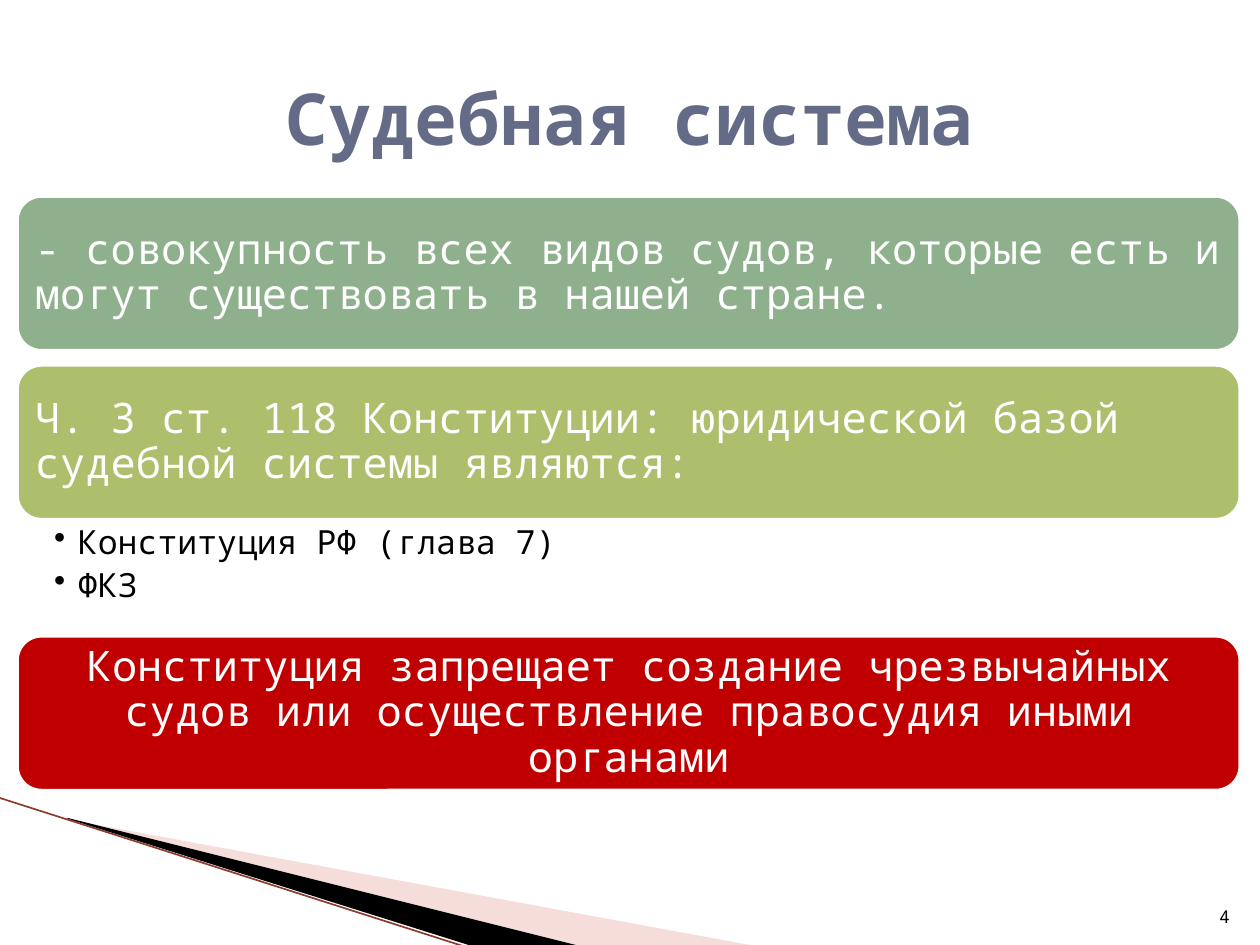
from lxml import etree
from pptx import Presentation
from pptx.dml.color import RGBColor
from pptx.enum.shapes import MSO_CONNECTOR as Connector, MSO_SHAPE as Shape
from pptx.enum.text import MSO_ANCHOR as Anchor, PP_ALIGN as Align
from pptx.oxml.ns import qn
from pptx.util import Pt

FONT = "Noto Sans Mono"
COLORS = {
    "white": "FFFFFF", "black": "000000", "title": "646B86", "sage": "8FB08C",
    "olive": "ADBF6C", "red": "C00000", "pink": "E7ACA4", "edge": "8E3B2F",
}
TITLE = "Судебная система"
PAGE_NUMBER = "4"
LEFT, WIDTH, TOP = 8.6, 701.3, 110.9
CARD_HEIGHT, LIST_HEIGHT, GAP = 90.7, 64.1, 5.8
CARDS = [
    ("- совокупность всех видов судов, которые есть и могут существовать в нашей стране.",
     "sage", Align.LEFT, []),
    ("Ч. 3 ст. 118 Конституции: юридической базой судебной системы являются:",
     "olive", Align.LEFT, ["Конституция РФ (глава 7)", "ФКЗ"]),
    ("Конституция запрещает создание чрезвычайных судов или осуществление правосудия иными органами",
     "red", Align.CENTER, []),
]
WEDGES = [
    ("pink", 40, [(39.6, 468.5), (428.4, 540), (328.3, 540), (39.6, 468)]),
    ("black", 100, [(38.2, 467.3), (329, 540), (267.8, 540), (38.9, 468)]),
]


def color(name):
    return RGBColor.from_string(COLORS[name])


def fill(shape, name):
    shape.shadow.inherit = False
    shape.fill.solid()
    shape.fill.fore_color.rgb = color(name)


def write(shape, lines, size, tone, align=Align.LEFT, anchor=Anchor.MIDDLE,
          insets=(7.2, 3.6, 7.2, 3.6), spacing=1.0, bold=False, bullets=False):
    frame = shape.text_frame
    frame.word_wrap = True
    frame.vertical_anchor = anchor
    (frame.margin_left, frame.margin_top,
     frame.margin_right, frame.margin_bottom) = map(Pt, insets)
    for index, line in enumerate(lines):
        para = frame.add_paragraph() if index else frame.paragraphs[0]
        para.text = line
        para.alignment = align
        para.line_spacing = spacing
        if bullets:
            para.space_after = Pt(4)
            props = para._p.get_or_add_pPr()
            props.set("marL", str(Pt(13.7)))
            props.set("indent", str(-Pt(13.7)))
            etree.SubElement(props, qn("a:buChar")).set("char", "•")
        font = para.font
        font.name, font.size, font.bold = FONT, Pt(size), bold
        font.color.rgb = color(tone)


deck = Presentation()
deck.slide_width, deck.slide_height = Pt(720), Pt(540)
page = deck.slides.add_slide(deck.slide_layouts[6])
shapes = page.shapes


def text_box(left, top, width, height):
    return shapes.add_textbox(Pt(left), Pt(top), Pt(width), Pt(height))


for tone, opacity, points in WEDGES:
    corners = [(Pt(x), Pt(y)) for x, y in points]
    builder = shapes.build_freeform(*corners[0])
    builder.add_line_segments(corners[1:], close=True)
    wedge = builder.convert_to_shape()
    fill(wedge, tone)
    wedge.line.fill.background()
    if opacity < 100:
        tint = wedge._element.spPr.find(".//" + qn("a:srgbClr"))
        etree.SubElement(tint, qn("a:alpha")).set("val", str(opacity * 1000))

edge = shapes.add_connector(Connector.STRAIGHT, Pt(-0.7), Pt(455.8), Pt(267.1), Pt(541.4))
edge.line.color.rgb = color("edge")
edge.line.width = Pt(0.95)
etree.SubElement(edge._element.spPr, qn("a:effectLst"))

top = TOP
for text, tone, align, items in CARDS:
    card = shapes.add_shape(Shape.ROUNDED_RECTANGLE, Pt(LEFT), Pt(top), Pt(WIDTH), Pt(CARD_HEIGHT))
    fill(card, tone)
    card.line.color.rgb = color("white")
    card.line.width = Pt(4.33)
    write(card, [text], 24, "white", align, insets=(7,) * 4, spacing=0.9)
    top += CARD_HEIGHT
    if items:
        box = text_box(LEFT, top, WIDTH, LIST_HEIGHT)
        write(box, items, 19, "black", anchor=Anchor.TOP,
              insets=(22.3, 2.2, 13.7, 2.2), spacing=0.9, bullets=True)
        top += LIST_HEIGHT
    else:
        top += GAP

write(text_box(36, 21.6, 648, 90), [TITLE], 41, "title", Align.CENTER, bold=True)
write(text_box(681.1, 504.7, 28.8, 28.8), [PAGE_NUMBER], 10, "black", Align.RIGHT, Anchor.BOTTOM)

deck.save("out.pptx")
